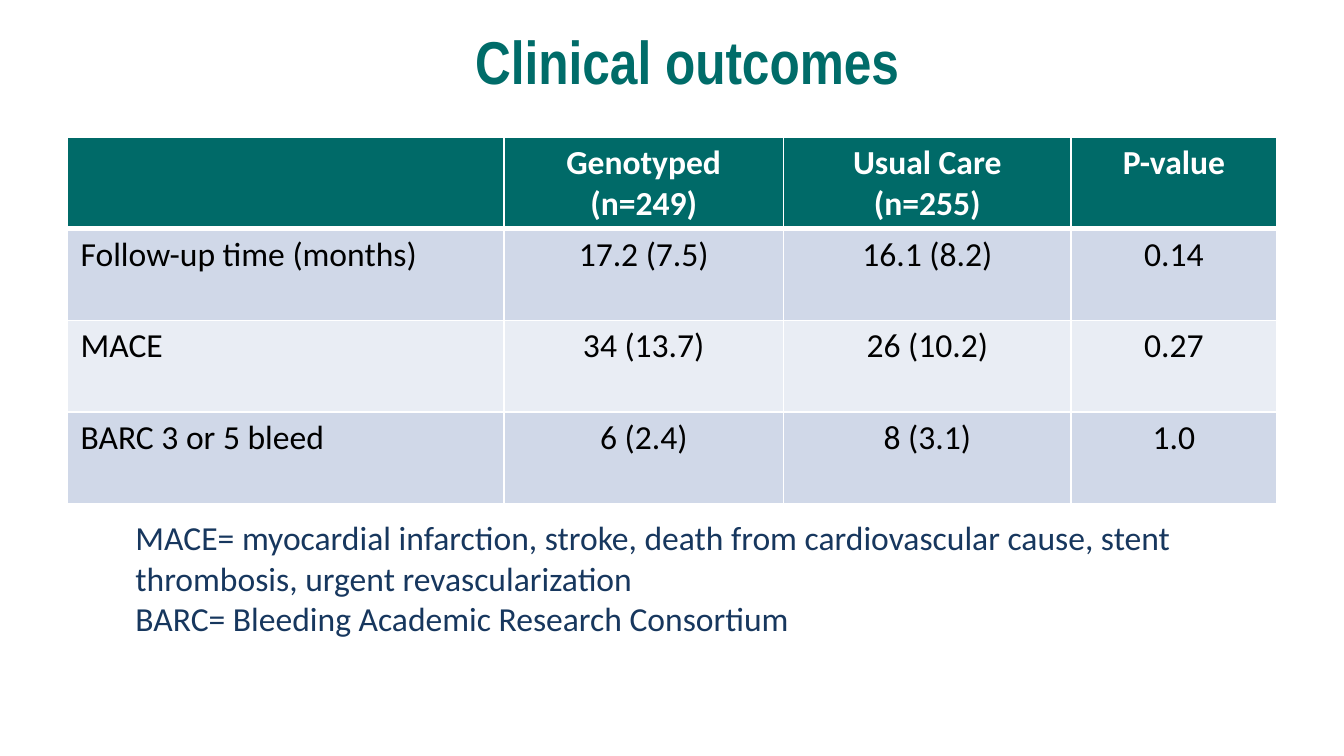
from lxml.etree import SubElement
from pptx import Presentation
from pptx.dml.color import RGBColor
from pptx.enum.text import MSO_ANCHOR, PP_ALIGN
from pptx.oxml.ns import qn
from pptx.util import Inches, Pt

TITLE = "Clinical outcomes"
HEADER = ["", "Genotyped\n(n=249)", "Usual Care\n(n=255)", "P-value"]
OUTCOMES = [
    ["Follow-up time (months)", "17.2 (7.5)", "16.1 (8.2)", "0.14"],
    ["MACE", "34 (13.7)", "26 (10.2)", "0.27"],
    ["BARC 3 or 5 bleed", "6 (2.4)", "8 (3.1)", "1.0"],
]
ABBREVIATIONS = (
    "MACE= myocardial infarction, stroke, death from cardiovascular cause, "
    "stent thrombosis, urgent revascularization\n"
    "BARC= Bleeding Academic Research Consortium"
)
SLIDE_WIDTH = 10
SLIDE_HEIGHT = SLIDE_WIDTH * 9 / 16
COLUMN_WIDTHS = [3.25, 2.08, 2.14, 1.53]
TABLE_HEIGHT = 2.73

THEME = {
    "title": "006C69",
    "header": "006A68",
    "bands": ["D0D8E8", "E9EDF4"],
    "rule": "FFFFFF",
    "header_text": "FFFFFF",
    "body_text": "000000",
    "note_text": "17375E",
    "title_font": "Arial Narrow",
    "body_font": "Calibri",
    "title_size": 32.4,
    "body_size": 18,
}


def style_text(frame, font, size, color, bold=False, align=PP_ALIGN.LEFT):
    for paragraph in frame.paragraphs:
        paragraph.alignment = align
        for run in paragraph.runs:
            run.font.name = font
            run.font.size = Pt(size)
            run.font.bold = bold
            run.font.color.rgb = RGBColor.from_string(color)


def add_text(slide, text, box, anchor, **style):
    frame = slide.shapes.add_textbox(*map(Inches, box)).text_frame
    frame.word_wrap = True
    frame.vertical_anchor = anchor
    frame.text = text
    style_text(frame, **style)


def add_borders(cell, top, bottom):
    properties = cell._tc.get_or_add_tcPr()
    for side, width in (("L", 1), ("R", 1), ("T", top), ("B", bottom)):
        line = SubElement(properties, qn(f"a:ln{side}"), w=str(Pt(width)))
        fill = SubElement(line, qn("a:solidFill"))
        SubElement(fill, qn("a:srgbClr"), val=THEME["rule"])


def add_outcomes(slide):
    rows = [HEADER] + OUTCOMES
    table = slide.shapes.add_table(
        len(rows), len(HEADER), Inches(0.5), Inches(1.02),
        Inches(sum(COLUMN_WIDTHS)), Inches(TABLE_HEIGHT),
    ).table
    for column, width in zip(table.columns, COLUMN_WIDTHS):
        column.width = Inches(width)
    for r, values in enumerate(rows):
        is_header = r == 0
        band = THEME["header"] if is_header else THEME["bands"][(r - 1) % 2]
        for c, value in enumerate(values):
            cell = table.cell(r, c)
            cell.margin_left = cell.margin_right = Inches(0.1)
            cell.margin_top = cell.margin_bottom = Inches(0.04)
            add_borders(cell, 3 if r == 1 else 1, 3 if is_header else 1)
            cell.fill.solid()
            cell.fill.fore_color.rgb = RGBColor.from_string(band)
            cell.text_frame.text = value
            style_text(
                cell.text_frame, THEME["body_font"], THEME["body_size"],
                THEME["header_text" if is_header else "body_text"], is_header,
                PP_ALIGN.CENTER if is_header or c else PP_ALIGN.LEFT,
            )


def main():
    deck = Presentation()
    deck.slide_width = Inches(SLIDE_WIDTH)
    deck.slide_height = Inches(SLIDE_HEIGHT)
    slide = deck.slides.add_slide(deck.slide_layouts[6])
    add_text(
        slide, TITLE, (0.5, 0.15, 9.23, 0.6), MSO_ANCHOR.MIDDLE,
        font=THEME["title_font"], size=THEME["title_size"],
        color=THEME["title"], bold=True, align=PP_ALIGN.CENTER,
    )
    add_outcomes(slide)
    add_text(
        slide, ABBREVIATIONS, (0.91, 3.8, 8.16, 1.01), MSO_ANCHOR.TOP,
        font=THEME["body_font"], size=THEME["body_size"],
        color=THEME["note_text"],
    )
    deck.save("out.pptx")


if __name__ == "__main__":
    main()
